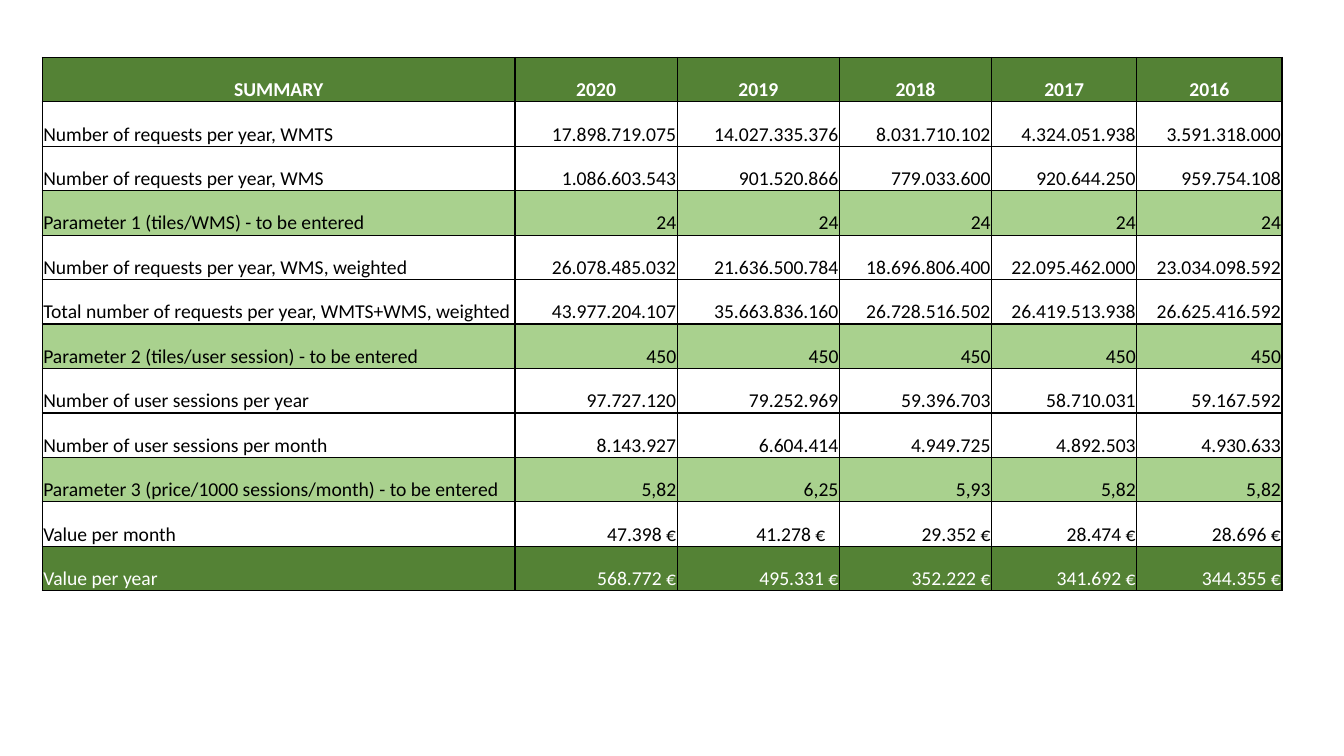
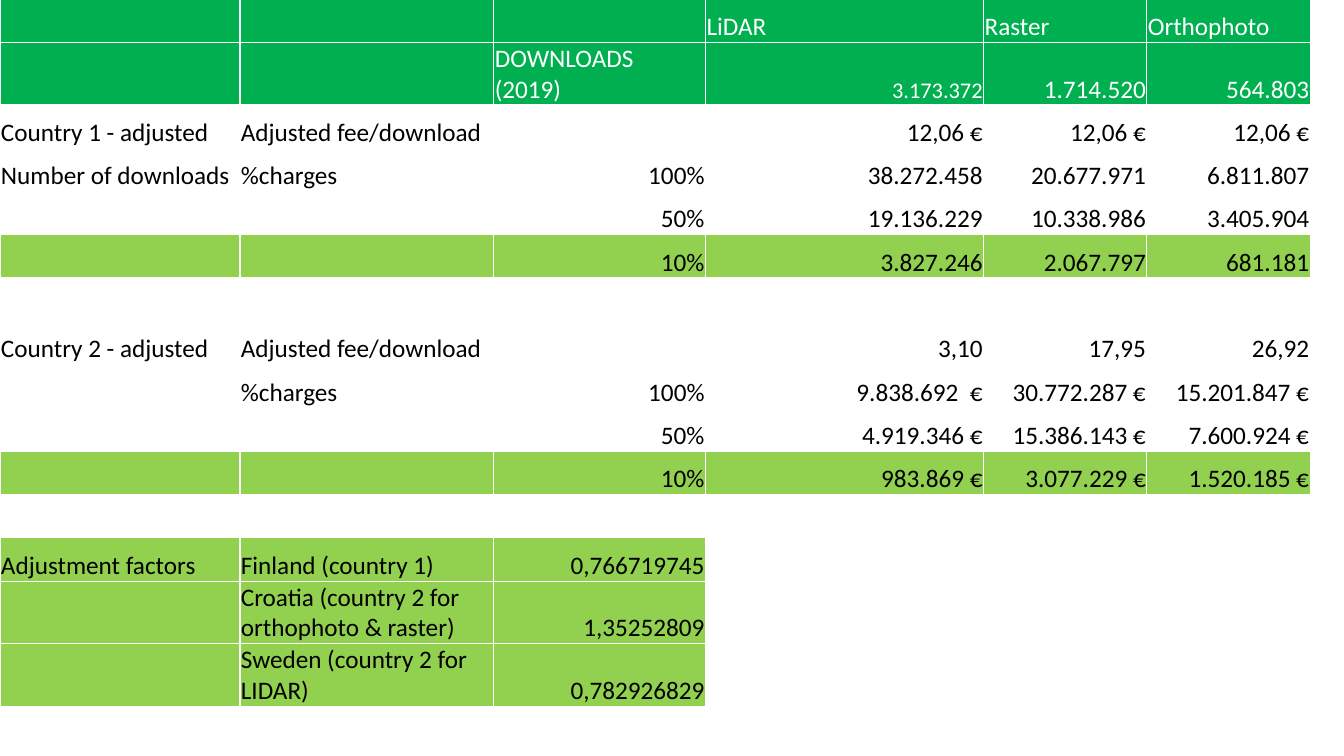
from dataclasses import dataclass

from lxml.etree import SubElement
from pptx import Presentation
from pptx.dml.color import RGBColor as RGB
from pptx.enum.text import MSO_ANCHOR as ANCHOR, PP_ALIGN as ALIGN
from pptx.oxml.ns import qn
from pptx.util import Pt


@dataclass(frozen=True)
class Theme:
    font: str = "Calibri"
    white: str = "FFFFFF"
    black: str = "000000"
    forest: str = "548235"
    sage: str = "A9D18E"
    emerald: str = "00B050"
    lime: str = "92D050"
    summary_size: float = 14
    downloads_size: float = 18
    small_size: float = 16
    border: float = 1
    inset: float = 0.72


theme = Theme()


def set_borders(cell, color):
    tcPr = cell._tc.get_or_add_tcPr()
    for i, side in enumerate(("a:lnL", "a:lnR", "a:lnT", "a:lnB")):
        ln = SubElement(tcPr, qn(side), w=str(Pt(theme.border)))
        fill = SubElement(ln, qn("a:solidFill"))
        SubElement(fill, qn("a:srgbClr"), val=color)
        tcPr.remove(ln)
        tcPr.insert(i, ln)


def add_grid(slide, left, top, widths, row_height, rows, size, border):
    frame = slide.shapes.add_table(len(rows), len(widths), Pt(left), Pt(top),
                                   Pt(sum(widths)), Pt(row_height * len(rows)))
    table = frame.table
    table.first_row = table.horz_banding = False
    for column, width in zip(table.columns, widths):
        column.width = Pt(width)
    for r_i, (fills, color, line) in enumerate(rows):
        table.rows[r_i].height = Pt(row_height)
        texts = line.split("|") if line else []
        for c_i in range(len(widths)):
            cell = table.cell(r_i, c_i)
            cell.vertical_anchor = ANCHOR.BOTTOM
            cell.margin_left = cell.margin_right = cell.margin_top = Pt(theme.inset)
            cell.margin_bottom = 0
            if fills[c_i]:
                cell.fill.solid()
                cell.fill.fore_color.rgb = RGB.from_string(fills[c_i])
            else:
                cell.fill.background()
            set_borders(cell, border)
            text = texts[c_i] if c_i < len(texts) else ""
            if not text:
                continue
            p = cell.text_frame.paragraphs[0]
            p.alignment = ALIGN.RIGHT if text[0].isdigit() else ALIGN.LEFT
            r = p.add_run()
            r.text = text
            r.font.name = theme.font
            r.font.size = Pt(size)
            r.font.bold = False
            r.font.color.rgb = RGB.from_string(color)
    return table


prs = Presentation()
prs.slide_width, prs.slide_height = Pt(960), Pt(540)
blank = prs.slide_layouts[6]

dark = ([theme.forest] * 6, theme.white)
plain = ([theme.white] * 6, theme.black)
entered = ([theme.sage] * 6, theme.black)
summary_rows = [
    (*dark, "SUMMARY|2020|2019|2018|2017|2016"),
    (*plain, "Number of requests per year, WMTS|17.898.719.075|14.027.335.376|8.031.710.102|4.324.051.938|3.591.318.000"),
    (*plain, "Number of requests per year, WMS|1.086.603.543|901.520.866|779.033.600|920.644.250|959.754.108"),
    (*entered, "Parameter 1 (tiles/WMS) - to be entered|24|24|24|24|24"),
    (*plain, "Number of requests per year, WMS, weighted|26.078.485.032|21.636.500.784|18.696.806.400|22.095.462.000|23.034.098.592"),
    (*plain, "Total number of requests per year, WMTS+WMS, weighted|43.977.204.107|35.663.836.160|26.728.516.502|26.419.513.938|26.625.416.592"),
    (*entered, "Parameter 2 (tiles/user session) - to be entered|450|450|450|450|450"),
    (*plain, "Number of user sessions per year|97.727.120|79.252.969|59.396.703|58.710.031|59.167.592"),
    (*plain, "Number of user sessions per month|8.143.927|6.604.414|4.949.725|4.892.503|4.930.633"),
    (*entered, "Parameter 3 (price/1000 sessions/month) - to be entered|5,82|6,25|5,93|5,82|5,82"),
    (*plain, "Value per month|47.398 €|41.278 €|29.352 €|28.474 €|28.696 €"),
    (*dark, "Value per year|568.772 €|495.331 €|352.222 €|341.692 €|344.355 €"),
]
s = prs.slides.add_slide(blank)
summary = add_grid(s, 30.2, 41, [337.7, 115.9, 115.9, 108.7, 103.7, 103.7], 31.75,
                   summary_rows, theme.summary_size, theme.black)
for cell in summary.rows[0].cells:
    p = cell.text_frame.paragraphs[0]
    p.alignment = ALIGN.CENTER
    p.runs[0].font.bold = True
summary.cell(10, 2).margin_right = Pt(10)

header = ([theme.emerald] * 6, theme.white)
clear = ([None] * 6, theme.black)
highlight = ([theme.lime] * 6, theme.black)
factor = ([theme.lime] * 3 + [None] * 3, theme.black)
download_rows = [
    (*header, "|||LiDAR|Raster|Orthophoto"),
    (*header, "||DOWNLOADS (2019)|3.173.372|1.714.520|564.803"),
    (*clear, "Country 1 - adjusted|Adjusted fee/download||12,06 €|12,06 €|12,06 €"),
    (*clear, "Number of downloads|%charges|100%|38.272.458|20.677.971|6.811.807"),
    (*clear, "||50%|19.136.229|10.338.986|3.405.904"),
    (*highlight, "||10%|3.827.246|2.067.797|681.181"),
    (*clear, ""),
    (*clear, "Country 2 - adjusted|Adjusted fee/download||3,10|17,95|26,92"),
    (*clear, "|%charges|100%|9.838.692  €|30.772.287 €|15.201.847 €"),
    (*clear, "||50%|4.919.346 €|15.386.143 €|7.600.924 €"),
    (*highlight, "||10%|983.869 €|3.077.229 €|1.520.185 €"),
    (*clear, ""),
    (*factor, "Adjustment factors|Finland (country 1)|0,766719745"),
    (*factor, "|Croatia (country 2 for orthophoto & raster)|1,35252809"),
    (*factor, "|Sweden (country 2 for LIDAR)|0,782926829"),
    (*clear, ""),
]
s = prs.slides.add_slide(blank)
downloads = add_grid(s, 0, -0.7, [171.4, 181.4, 151.2, 198.7, 116.6, 116.6], 30.95,
                     download_rows, theme.downloads_size, theme.white)
lidar_total = downloads.cell(1, 3).text_frame.paragraphs[0].runs[0]
lidar_total.font.size = Pt(theme.small_size)

prs.save("out.pptx")
